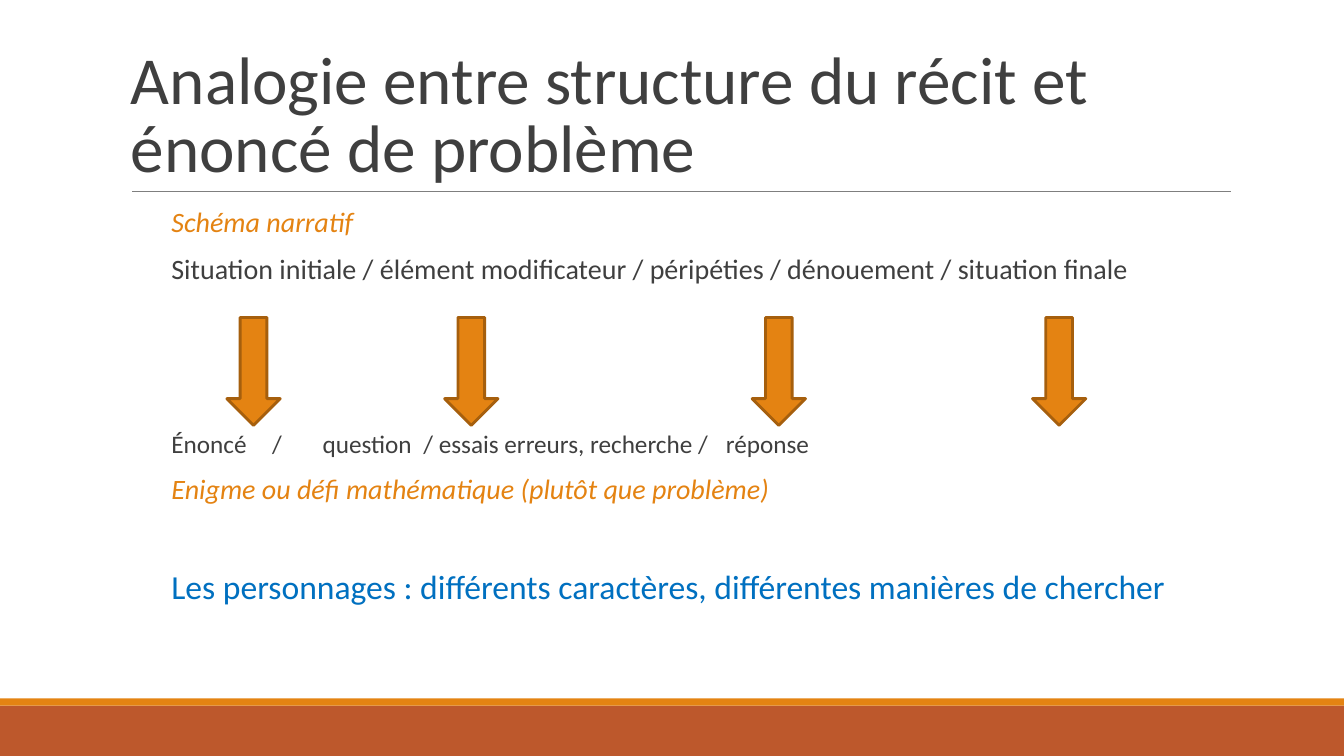
from dataclasses import dataclass

from lxml import etree
from pptx import Presentation
from pptx.dml.color import RGBColor
from pptx.enum.shapes import MSO_CONNECTOR as Connector, MSO_SHAPE as Shape
from pptx.enum.text import MSO_ANCHOR as Anchor, PP_ALIGN as Align
from pptx.oxml.ns import qn
from pptx.util import Inches, Pt


@dataclass(frozen=True)
class Theme:
    font: str = "Calibri"
    ink: str = "3F3F3F"
    orange: str = "E48312"
    orange_edge: str = "A65F0D"
    rust: str = "BD582C"
    blue: str = "0070C0"
    rule: str = "7F7F7F"
    title_size: int = 48
    lead_size: int = 24
    body_size: int = 20
    step_size: int = 18


class SlideBuilder:
    def __init__(self, slide, theme):
        self.slide = slide
        self.theme = theme

    def shape(self, kind, left, top, width, height, fill, edge=None):
        shape = self.slide.shapes.add_shape(
            kind, Inches(left), Inches(top), Inches(width), Inches(height))
        shape.shadow.inherit = False
        shape.fill.solid()
        shape.fill.fore_color.rgb = RGBColor.from_string(fill)
        if edge:
            shape.line.color.rgb = RGBColor.from_string(edge)
            shape.line.width = Pt(2)
        else:
            shape.line.fill.background()

    def rule(self, left, right, top):
        line = self.slide.shapes.add_connector(
            Connector.STRAIGHT, Inches(left), Inches(top), Inches(right), Inches(top))
        line.line.color.rgb = RGBColor.from_string(self.theme.rule)
        line.line.width = Pt(0.75)
        etree.SubElement(line._element.spPr, qn("a:effectLst"))

    def text_frame(self, left, top, width, height, side_inset, anchor):
        box = self.slide.shapes.add_textbox(
            Inches(left), Inches(top), Inches(width), Inches(height))
        frame = box.text_frame
        frame.word_wrap = True
        frame.vertical_anchor = anchor
        frame.margin_left = frame.margin_right = Inches(side_inset)
        frame.margin_top = frame.margin_bottom = Inches(0.05)
        return frame

    def fill_paragraph(self, paragraph, text, size, color, italic=False,
                       spacing=0.9, before=12, indent=0.5, tabs=()):
        """Set text and style; indent and tab stops are in inches from the box edge."""
        paragraph.text = text
        paragraph.alignment = Align.LEFT
        paragraph.line_spacing = spacing
        paragraph.space_before = Pt(before)
        properties = paragraph._p.get_or_add_pPr()
        properties.set("marL", str(Inches(indent)))
        properties.set("indent", "0")
        if tabs:
            stops = etree.SubElement(properties, qn("a:tabLst"))
            for position in tabs:
                etree.SubElement(stops, qn("a:tab"), pos=str(Inches(position)), algn="l")
        for run in paragraph.runs:
            run.font.name = self.theme.font
            run.font.size = Pt(size)
            run.font.italic = italic
            run.font.color.rgb = RGBColor.from_string(color)


def main():
    theme = Theme()
    deck = Presentation()
    deck.slide_width, deck.slide_height = Inches(13.33), Inches(7.5)
    page = SlideBuilder(deck.slides.add_slide(deck.slide_layouts[6]), theme)

    page.shape(Shape.RECTANGLE, 0, 7, 13.33, 0.5, theme.rust)
    page.shape(Shape.RECTANGLE, 0, 6.93, 13.33, 0.07, theme.orange)
    page.rule(1.31, 12.21, 1.9)

    title = page.text_frame(1.2, 0.31, 11, 1.59, 0.1, Anchor.BOTTOM)
    page.fill_paragraph(title.paragraphs[0],
                        "Analogie entre structure du récit et énoncé de problème",
                        theme.title_size, theme.ink, spacing=0.85, before=0, indent=0)

    heading = dict(size=theme.body_size, color=theme.orange, italic=True)
    steps = ["Énoncé", "/", "question", "/ essais erreurs, recherche /", "réponse"]
    lines = [
        ("Schéma narratif", heading),
        ("Situation initiale / élément modificateur / péripéties / dénouement / situation finale",
         dict(size=theme.body_size, color=theme.ink)),
        ("\t" + "\t".join(steps),
         dict(size=theme.step_size, color=theme.ink, before=104, indent=0,
              tabs=(0.9, 2.63, 3.62, 5.68, 9.62))),
        ("Enigme ou défi mathématique (plutôt que problème)", heading),
        ("Les personnages : différents caractères, différentes manières de chercher",
         dict(size=theme.lead_size, color=theme.blue, before=46)),
    ]
    body = page.text_frame(1.2, 2.02, 11, 4.4, 0, Anchor.TOP)
    for index, (text, style) in enumerate(lines):
        paragraph = body.add_paragraph() if index else body.paragraphs[0]
        page.fill_paragraph(paragraph, text, **style)

    for arrow_left in (2.25, 4.41, 7.46, 10.24):
        page.shape(Shape.DOWN_ARROW, arrow_left, 3.15, 0.53, 1.07,
                   theme.orange, theme.orange_edge)

    deck.save("out.pptx")


if __name__ == "__main__":
    main()
